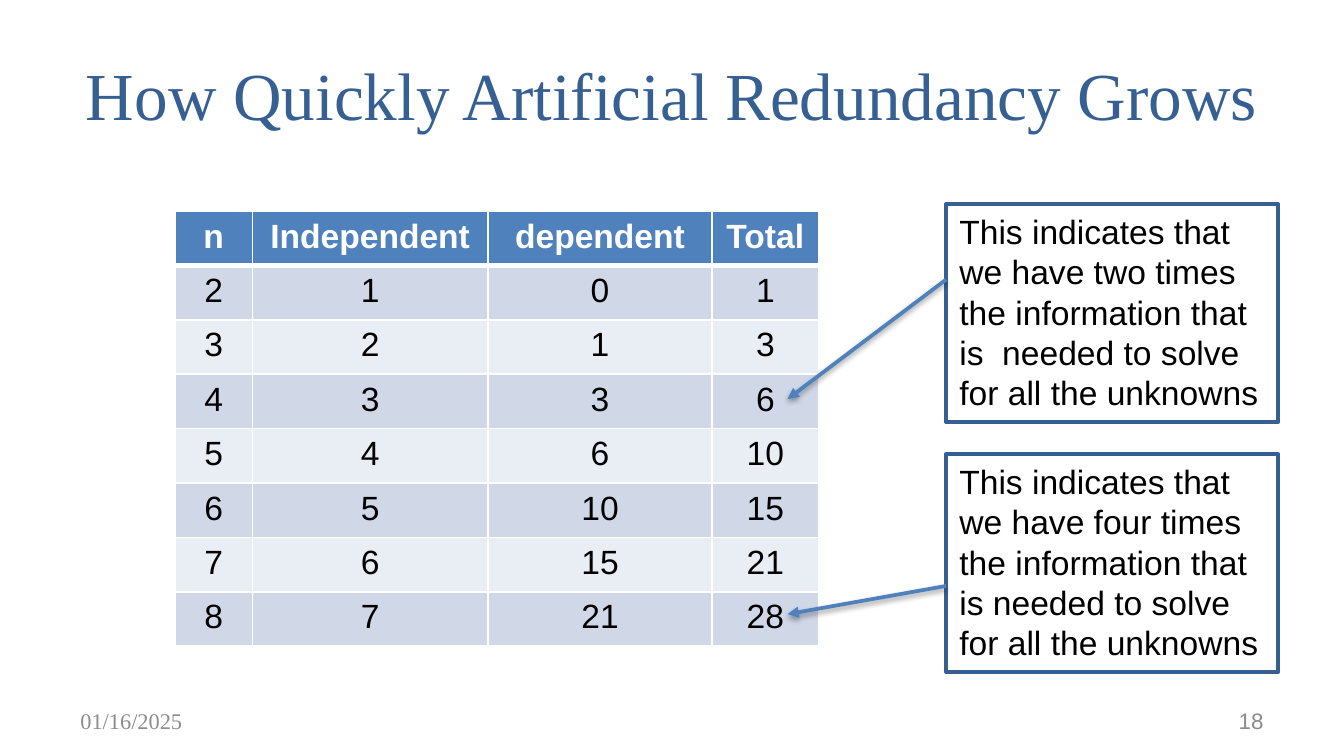
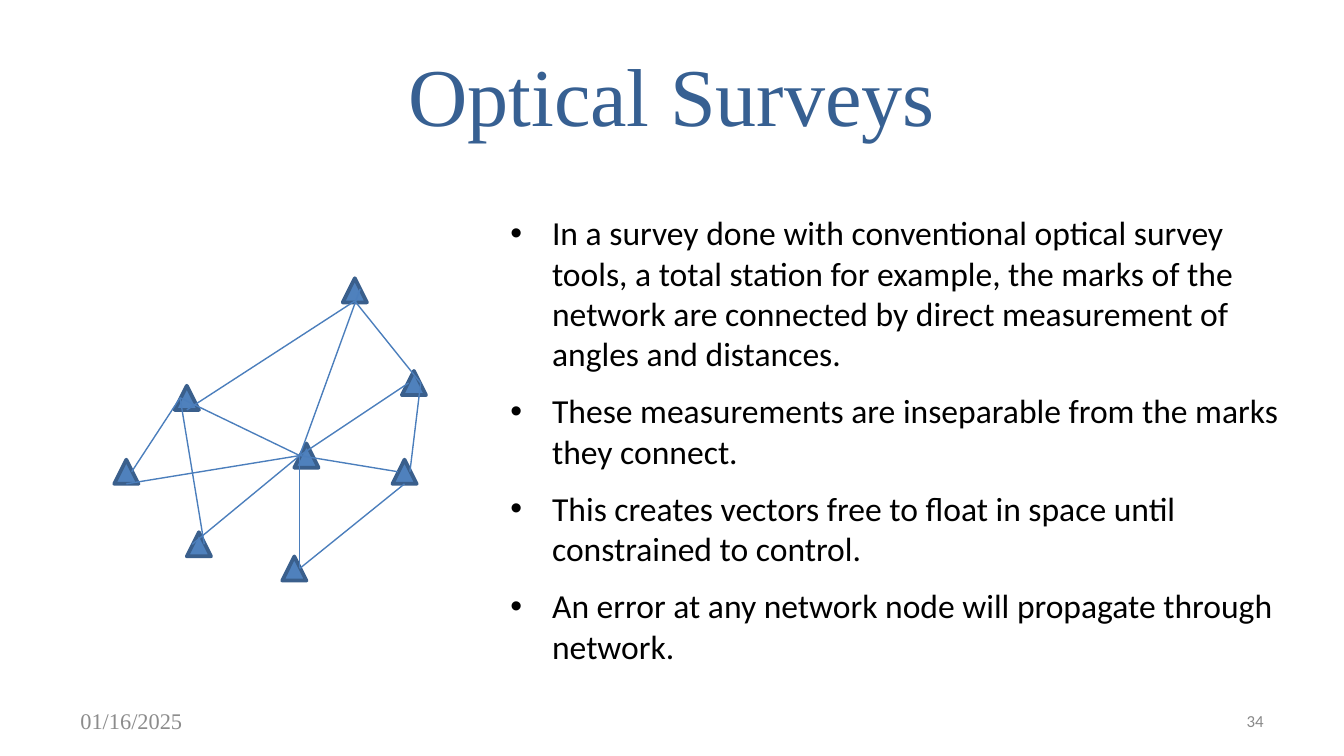
from dataclasses import dataclass

import pptx
import pptx.dml.color
import pptx.enum.shapes
import pptx.enum.text
import pptx.oxml
import pptx.oxml.ns
import pptx.util
from lxml import etree

Inches = pptx.util.Inches
Pt = pptx.util.Pt
Shape = pptx.enum.shapes.MSO_SHAPE
Align = pptx.enum.text.PP_ALIGN
Anchor = pptx.enum.text.MSO_ANCHOR
AutoSize = pptx.enum.text.MSO_AUTO_SIZE
qn = pptx.oxml.ns.qn


@dataclass(frozen=True)
class Theme:
    navy: str = "376092"
    blue: str = "4F81BD"
    mark_line: str = "3A5F8C"
    sight_line: str = "4B7EBC"
    band_dark: str = "D0D8E8"
    band_light: str = "E9EDF4"
    white: str = "FFFFFF"
    black: str = "000000"
    date_grey: str = "8C8C8C"
    number_grey: str = "898989"
    serif: str = "Times New Roman"
    sans: str = "Arial"
    body: str = "Calibri"
    title_size: int = 44
    long_title_size: int = 36
    text_size: int = 18
    footer_size: int = 12
    small_size: int = 9


T = Theme()

REDUNDANCY = [("n", "Independent", "dependent", "Total")] + [
    (n, n - 1, (n - 1) * (n - 2) // 2, n * (n - 1) // 2) for n in range(2, 9)
]
COLUMN_WIDTHS = (0.58, 1.75, 1.67, 0.79)
TABLE_HEIGHT = 3.24

MARK_SIZE = 0.18
MARKS = [
    (1.39, 3.96), (0.85, 3.42), (1.3, 2.87), (2.55, 2.07),
    (2.19, 3.3), (2.99, 2.76), (2.1, 4.14), (2.92, 3.42),
]
HUB = (2.23, 3.39)
WEST = (1.34, 2.96)
NORTH = (2.64, 2.24)
EAST = (3.13, 2.85)
SOUTH = (2.23, 4.23)
SIGHTS = [
    ((0.98, 3.51), WEST), (WEST, HUB), (WEST, (1.52, 4.05)),
    ((0.94, 3.6), HUB), ((1.39, 3.05), NORTH), (NORTH, EAST),
    ((3.04, 2.85), HUB), (EAST, (3.05, 3.51)), ((3.01, 3.6), SOUTH),
    (SOUTH, HUB), ((2.68, 2.15), HUB), ((1.43, 4.05), HUB),
    (HUB, (2.96, 3.51)),
]

POINTS = [
    "In a survey done with conventional optical survey tools, a total station for example, "
    "the marks of the network are connected by direct measurement of angles and distances.",
    "These measurements are inseparable from the marks they connect.",
    "This creates vectors free to float in space until constrained to control.",
    "An error at any network node will propagate through network.",
]


def rgb(value):
    return pptx.dml.color.RGBColor.from_string(value)


def add_run(p, text, font, size, color, bold=False):
    r = p.add_run()
    r.text = text
    r.font.name = font
    r.font.size = Pt(size)
    r.font.bold = bold
    r.font.color.rgb = rgb(color)


def add_titled_slide(prs, title, size):
    s = prs.slides.add_slide(prs.slide_layouts[5])
    sp = s.shapes.title
    sp.left, sp.top, sp.width, sp.height = map(Inches, (0.5, 0.23, 9, 0.94))
    tf = sp.text_frame
    tf.vertical_anchor = Anchor.MIDDLE
    tf.paragraphs[0].alignment = Align.CENTER
    add_run(tf.paragraphs[0], title, T.serif, size, T.navy)
    return s


def add_footer_text(s, left, text, align, font, size, color):
    tf = s.shapes.add_textbox(Inches(left), Inches(5.21), Inches(2.33), Inches(0.3)).text_frame
    tf.word_wrap = True
    tf.vertical_anchor = Anchor.MIDDLE
    tf.paragraphs[0].alignment = align
    add_run(tf.paragraphs[0], text, font, size, color)


def add_footer(s, number, font, size, color):
    add_footer_text(s, 0.5, "01/16/2025", Align.LEFT, T.serif, T.footer_size, T.date_grey)
    add_footer_text(s, 7.17, number, Align.RIGHT, font, size, color)


def set_borders(cell, top, bottom):
    tc_pr = cell._tc.get_or_add_tcPr()
    for tag, width in (("lnL", 1), ("lnR", 1), ("lnT", top), ("lnB", bottom)):
        ln = etree.SubElement(tc_pr, qn("a:" + tag), w=str(Pt(width)))
        fill = etree.SubElement(ln, qn("a:solidFill"))
        etree.SubElement(fill, qn("a:srgbClr"), val=T.white)


def add_redundancy_table(s):
    table = s.shapes.add_table(
        len(REDUNDANCY), len(COLUMN_WIDTHS), Inches(1.3), Inches(1.57),
        Inches(sum(COLUMN_WIDTHS)), Inches(TABLE_HEIGHT)).table
    for column, width in zip(table.columns, COLUMN_WIDTHS):
        column.width = Inches(width)
    for i, values in enumerate(REDUNDANCY):
        header = i == 0
        fill = T.blue if header else T.band_dark if i % 2 else T.band_light
        for j, value in enumerate(values):
            cell = table.cell(i, j)
            set_borders(cell, 3 if i == 1 else 1, 3 if header else 1)
            cell.fill.solid()
            cell.fill.fore_color.rgb = rgb(fill)
            p = cell.text_frame.paragraphs[0]
            p.alignment = Align.CENTER
            add_run(p, str(value), T.sans, T.text_size, T.white if header else T.black, header)


def add_note_box(s, top, text):
    sp = s.shapes.add_shape(Shape.RECTANGLE, Inches(7.04), Inches(top), Inches(2.47), Inches(1.62))
    sp.shadow.inherit = False
    sp.fill.background()
    sp.line.color.rgb = rgb(T.navy)
    sp.line.width = Pt(2.25)
    tf = sp.text_frame
    tf.word_wrap = True
    tf.auto_size = AutoSize.SHAPE_TO_FIT_TEXT
    tf.vertical_anchor = Anchor.TOP
    tf.paragraphs[0].alignment = Align.LEFT
    add_run(tf.paragraphs[0], text, T.sans, T.text_size, T.black)


def add_line(shapes, start, end, color, width):
    line = shapes.add_connector(
        pptx.enum.shapes.MSO_CONNECTOR.STRAIGHT, *map(Inches, (*start, *end)))
    line.line.color.rgb = rgb(color)
    line.line.width = Pt(width)
    effects = etree.SubElement(line._element.spPr, qn("a:effectLst"))
    return line, effects


def add_arrow(s, start, end):
    line, effects = add_line(s.shapes, start, end, T.blue, 2)
    etree.SubElement(line.line._get_or_add_ln(), qn("a:tailEnd"), type="triangle")
    shadow = etree.SubElement(
        effects, qn("a:outerShdw"), blurRad=str(Pt(3.1)), dist=str(Pt(1.6)),
        dir=str(90 * 60000), rotWithShape="0")
    color = etree.SubElement(shadow, qn("a:srgbClr"), val=T.black)
    etree.SubElement(color, qn("a:alpha"), val="38000")


def add_mark(shapes, left, top):
    sp = shapes.add_shape(
        Shape.ISOSCELES_TRIANGLE, Inches(left), Inches(top), Inches(MARK_SIZE), Inches(MARK_SIZE))
    sp.shadow.inherit = False
    sp.fill.solid()
    sp.fill.fore_color.rgb = rgb(T.blue)
    sp.line.color.rgb = rgb(T.mark_line)
    sp.line.width = Pt(2)


def add_survey_network(s):
    shapes = s.shapes.add_group_shape().shapes
    for left, top in MARKS:
        add_mark(shapes, left, top)
    for start, end in SIGHTS:
        add_line(shapes, start, end, T.sight_line, 0.75)


def add_bullets(s, points):
    tf = s.shapes.add_textbox(Inches(3.7), Inches(1.53), Inches(6.07), Inches(3.55)).text_frame
    tf.word_wrap = True
    tf.auto_size = AutoSize.SHAPE_TO_FIT_TEXT
    for i, text in enumerate(points):
        p = tf.add_paragraph() if i else tf.paragraphs[0]
        p.space_before = Pt(4.5 if i else 0)
        p.space_after = Pt(4.5)
        p_pr = p._p.get_or_add_pPr()
        p_pr.set("marL", str(Inches(0.31)))
        p_pr.set("indent", str(Inches(-0.31)))
        etree.SubElement(p_pr, qn("a:buFont"), typeface=T.sans)
        etree.SubElement(p_pr, qn("a:buChar"), char="•")
        add_run(p, text, T.body, T.text_size, T.black)


def build_redundancy_slide(prs):
    s = add_titled_slide(prs, "How Quickly Artificial Redundancy Grows", T.long_title_size)
    add_redundancy_table(s)
    add_footer(s, "18", T.sans, T.footer_size, T.date_grey)
    add_note_box(s, 1.52, "This indicates that we have two times the information that is  needed "
                          "to solve for all the unknowns")
    add_note_box(s, 3.38, "This indicates that we have four times the information that is needed "
                          "to solve for all the unknowns")
    add_arrow(s, (7.04, 2.08), (5.86, 2.97))
    add_arrow(s, (7.04, 4.36), (5.86, 4.57))


def build_survey_slide(prs):
    s = add_titled_slide(prs, "Optical Surveys", T.title_size)
    add_survey_network(s)
    add_bullets(s, POINTS)
    add_footer(s, "34", T.body, T.small_size, T.number_grey)


def main():
    prs = pptx.Presentation()
    prs.slide_width = Inches(10)
    prs.slide_height = prs.slide_width * 9 // 16
    build_redundancy_slide(prs)
    build_survey_slide(prs)
    prs.save("out.pptx")


if __name__ == "__main__":
    main()
